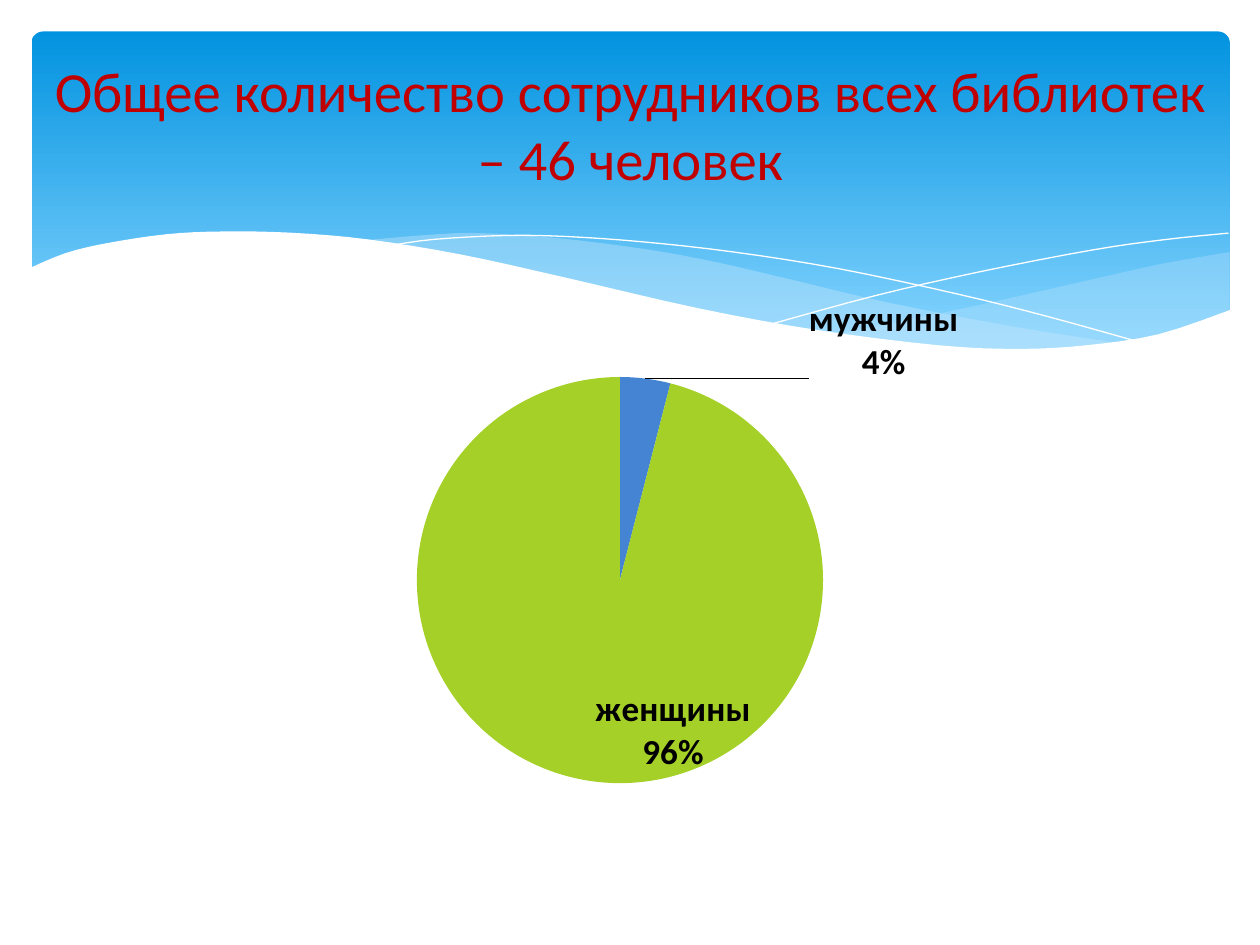
from lxml.etree import SubElement
from pptx import Presentation
from pptx.chart.data import CategoryChartData
from pptx.dml.color import RGBColor
from pptx.enum.chart import XL_CHART_TYPE, XL_LABEL_POSITION
from pptx.enum.shapes import MSO_SHAPE
from pptx.enum.text import MSO_ANCHOR, PP_ALIGN
from pptx.oxml import parse_xml
from pptx.oxml.ns import nsdecls, qn
from pptx.util import Pt

SKY_TOP = RGBColor(0x02, 0x93, 0xE0)
SKY_BOTTOM = RGBColor(0x83, 0xD3, 0xFE)
MIST = RGBColor(0xC6, 0xE7, 0xFC)
WHITE = RGBColor(0xFF, 0xFF, 0xFF)
BLACK = RGBColor(0, 0, 0)
RED = RGBColor(0xC0, 0x00, 0x00)
BLUE = RGBColor(0x45, 0x84, 0xD3)
GREEN = RGBColor(0xA5, 0xD0, 0x28)

# Knots of the curves, in points
LEFT_WAVE_TOP = [(206, 137.5), (248, 134), (274, 133.2), (318, 136), (370, 142.6), (410, 150),
                 (453, 160), (508, 173), (581, 187), (643, 196.6)]
LEFT_WAVE_BOTTOM = [(643, 196.6), (611, 199.4), (573, 200), (530, 198), (479, 191.5),
                    (407.5, 178.6), (323, 159.8), (260.6, 146), (206, 137.5)]
RIGHT_WAVE_TOP = [(702.7, 144), (663, 151), (620, 160.6), (561, 174), (508, 185), (476, 191)]
RIGHT_WAVE_BOTTOM = [(476, 191), (507.6, 195), (545, 198.7), (586, 200), (628, 197.3),
                     (668, 189.4), (702.7, 178)]
LONG_LINE = [(222.5, 140.4), (248, 136.8), (289, 134.6), (324, 135.2), (367, 138.2),
             (419, 144), (479, 153.5), (547, 168), (598, 180.7), (653, 196)]
SHORT_LINE = [(441.4, 185), (500, 169), (559, 155.5), (623.5, 143), (665, 137), (702, 133.2)]
WHITE_EDGE = [(703.4, 177), (662, 191), (621, 197.3), (582.5, 199.4), (536, 197.3), (467, 188.6),
              (400, 176.4), (322, 158.4), (263, 145.4), (210, 136.8), (166, 133), (127, 132.3),
              (95, 133.9), (61, 139), (37.4, 144.7), (16.6, 153.4)]
WHITE_BASE = [(16.6, 237), (703.4, 237)]


def smooth(knots, steps=4):
    """Points of a Catmull-Rom curve through the knots."""
    padded = [knots[0], *knots, knots[-1]]
    points = [knots[0]]
    for a, b, c, d in zip(padded, padded[1:], padded[2:], padded[3:]):
        for i in range(1, steps + 1):
            t = i / steps
            points.append(tuple(
                0.5 * (2 * q + (r - p) * t + (2 * p - 5 * q + 4 * r - u) * t ** 2
                       + (3 * q - p - 3 * r + u) * t ** 3)
                for p, q, r, u in zip(a, b, c, d)))
    return points


class Deck:
    font = "Calibri"

    def __init__(self, prs):
        self.s = prs.slides.add_slide(prs.slide_layouts[5])

    def style(self, font, size, color, bold=False):
        font.name, font.size, font.bold = self.font, Pt(size), bold
        font.color.rgb = color

    def panel(self, x, y, w, h, top, bottom):
        sp = self.s.shapes.add_shape(MSO_SHAPE.ROUNDED_RECTANGLE, Pt(x), Pt(y), Pt(w), Pt(h))
        sp.adjustments[0] = 0.034
        sp.shadow.inherit = False
        sp.line.fill.background()
        sp.fill.gradient()
        sp.fill.gradient_angle = 270
        for stop, position, color in zip(sp.fill.gradient_stops, (0, 0.9), (top, bottom)):
            stop.position = position
            stop.color.rgb = color

    def outline(self, points, closed):
        pts = [(Pt(x), Pt(y)) for x, y in points]
        builder = self.s.shapes.build_freeform(*pts[0])
        builder.add_line_segments(pts[1:], close=closed)
        sp = builder.convert_to_shape()
        sp.shadow.inherit = False
        return sp

    def area(self, points, color, opacity=100):
        sp = self.outline(points, True)
        sp.line.fill.background()
        sp.fill.solid()
        sp.fill.fore_color.rgb = color
        if opacity < 100:
            clr = sp.fill._xPr.find(".//" + qn("a:srgbClr"))
            SubElement(clr, qn("a:alpha"), val=str(opacity * 1000))

    def curve(self, knots, color):
        sp = self.outline(smooth(knots), False)
        sp.fill.background()
        sp.line.color.rgb = color
        sp.line.width = Pt(0)

    def title(self, text, x, y, w, h):
        sp = self.s.shapes.title
        self.s.shapes.element.append(sp.element)  # in front of the waves
        sp.left, sp.top, sp.width, sp.height = Pt(x), Pt(y), Pt(w), Pt(h)
        tf = sp.text_frame
        tf.word_wrap = True
        tf.vertical_anchor = MSO_ANCHOR.TOP
        tf.margin_top = Pt(6)
        p = tf.paragraphs[0]
        p.alignment = PP_ALIGN.CENTER
        r = p.add_run()
        r.text = text
        self.style(r.font, 32.4, RED)

    @staticmethod
    def layout(**values):
        parts = "".join(f'<c:{k} val="{v}"/>' for k, v in values.items())
        return parse_xml(f'<c:layout {nsdecls("c")}><c:manualLayout>{parts}'
                         '</c:manualLayout></c:layout>')

    def pie(self, x, y, w, h, slices):
        data = CategoryChartData()
        data.categories = [name for name, _, _ in slices]
        data.add_series("Series 1", [value for _, value, _ in slices])
        chart = self.s.shapes.add_chart(
            XL_CHART_TYPE.PIE, Pt(x), Pt(y), Pt(w), Pt(h), data).chart
        chart.has_legend = chart.has_title = False
        self.style(chart.font, 18, BLACK)
        plot = chart.plots[0]
        plot.vary_by_categories = True
        area = chart.element.find(".//" + qn("c:plotArea"))
        for old in area.findall(qn("c:layout")):
            area.remove(old)
        area.insert(0, self.layout(layoutTarget="inner", xMode="edge", yMode="edge",
                                   x=0.28, y=0.18, w=0.45, h=0.65))

        # Slices and their labels
        series = plot.series[0]
        for i, (_, _, color) in enumerate(slices):
            fill = series.points[i].format.fill
            fill.solid()
            fill.fore_color.rgb = color
        labels = series.data_labels
        self.style(labels.font, 20, BLACK, True)
        labels.position = XL_LABEL_POSITION.INSIDE_END
        label = series.points[0].data_label
        self.style(label.font, 20, BLACK, True)
        label.position = XL_LABEL_POSITION.OUTSIDE_END
        small = label._dLbl
        small.insert(1, self.layout(x=0.18, y=0.02))
        for node in (small, labels._element):
            for tag, val in (("showVal", 0), ("showCatName", 1), ("showPercent", 1)):
                node.find(qn(f"c:{tag}")).set("val", str(val))
            sep = parse_xml(f'<c:separator {nsdecls("c")}>\n</c:separator>')
            last = node.find(qn("c:showBubbleSize"))
            if last is None:
                last = node.find(qn("c:showPercent"))
            last.addnext(sep)


def main():
    prs = Presentation()
    prs.slide_width, prs.slide_height = Pt(720), Pt(540)
    deck = Deck(prs)

    # Blue header with waves
    deck.panel(18, 18, 684.7, 194.4, SKY_TOP, SKY_BOTTOM)
    deck.area(smooth(RIGHT_WAVE_TOP) + smooth(RIGHT_WAVE_BOTTOM), MIST, 29)
    deck.area(smooth(LEFT_WAVE_TOP) + smooth(LEFT_WAVE_BOTTOM), MIST, 40)
    deck.curve(LONG_LINE, WHITE)
    deck.curve(SHORT_LINE, WHITE)
    deck.area(smooth(WHITE_EDGE) + WHITE_BASE, WHITE)

    # Title and staff chart
    deck.title("Общее количество сотрудников всех библиотек – 46 человек", 20, 26, 680.4, 130.3)
    deck.pie(93.6, 151.2, 516.2, 357.1, [("мужчины", 4, BLUE), ("женщины", 96, GREEN)])
    prs.save("out.pptx")


if __name__ == "__main__":
    main()
